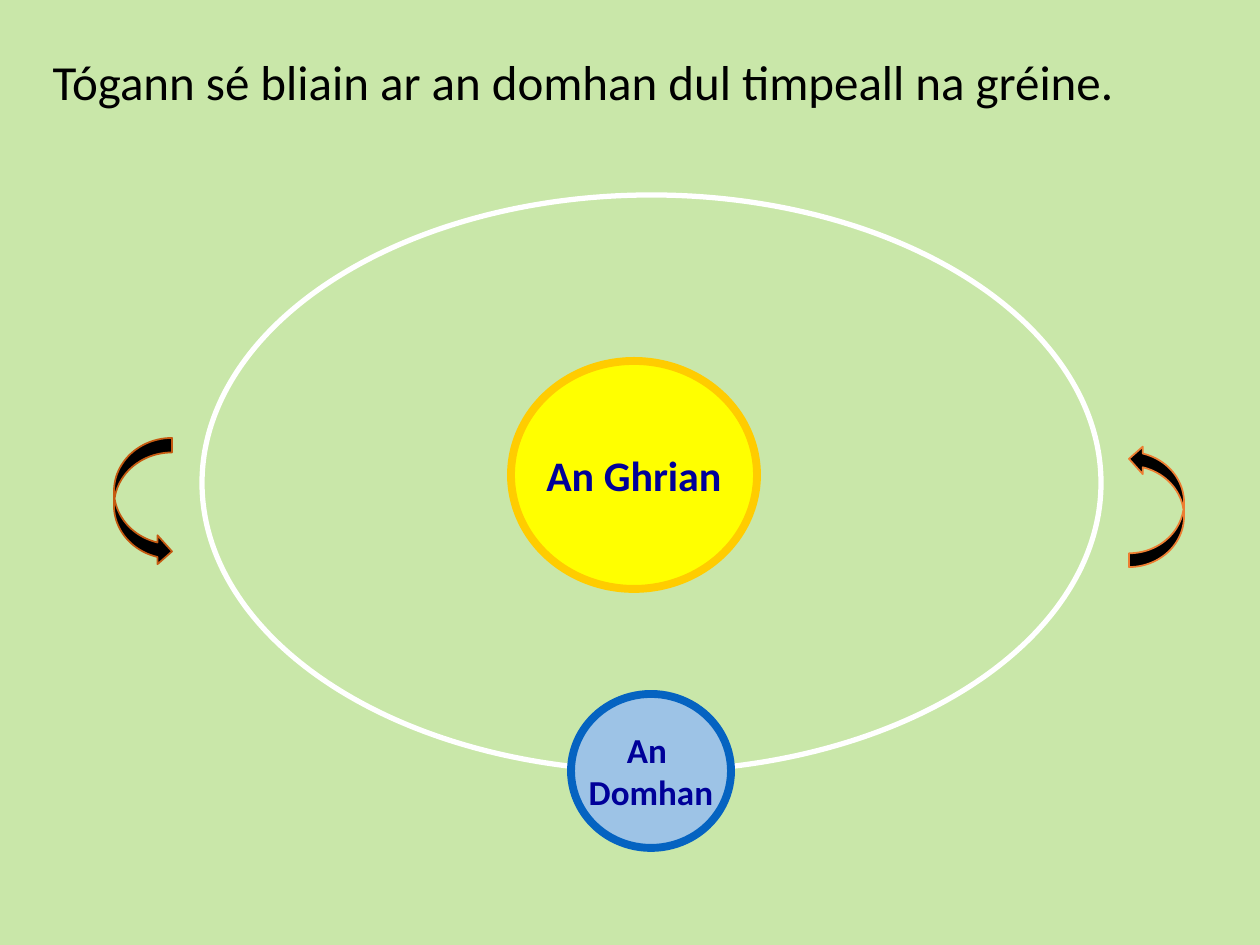
from pptx import Presentation
from pptx import util as u
from pptx.dml.color import RGBColor
from pptx.enum import shapes, text

PX = 914400 / 126  # EMU in one px
FONT = "Calibri"
BACKGROUND = "C9E7A9"
TITLE = "Tógann sé bliain ar an domhan dul timpeall na gréine."
TITLE_AREA = (40, 27, 1188, 115)

OVAL = shapes.MSO_SHAPE.OVAL
ARROW = shapes.MSO_SHAPE.CURVED_RIGHT_ARROW

# Sun, orbit, earth, left arrow, right arrow, from back to front:
# shape, area, fill, line, line width, turn, text lines, text size
PARTS = [
    (OVAL, (511, 361, 246, 228), "FFFF00", "FFCC00", 4.5, 0, ["An Ghrian"], 24),
    (OVAL, (202, 195, 899, 576), None, "FFFFFF", 3, 0, [], 0),
    (OVAL, (571, 694, 160, 154), "9DC3E6", "0563C1", 4.5, 0, ["An ", "Domhan"], 20),
    (ARROW, (114, 438, 58, 128), "000000", "C55A11", 1, 0, [], 0),
    (ARROW, (1129, 445, 55, 122), "000000", "ED7D31", 1, 180, [], 0),
]


def colour(value):
    return RGBColor.from_string(value)


def emu(area):
    return [round(length * PX) for length in area]


def write(frame, lines, align, size, ink, bold, wrap):
    settings = {"auto_size": text.MSO_AUTO_SIZE.NONE, "word_wrap": wrap,
                "vertical_anchor": text.MSO_ANCHOR.MIDDLE}
    for key, value in settings.items():
        setattr(frame, key, value)
    frame.text = "\n".join(lines)
    for para in frame.paragraphs:
        para.alignment = align
        for span in para.runs:
            for key, value in {"name": FONT, "size": u.Pt(size), "bold": bold}.items():
                setattr(span.font, key, value)
            span.font.color.rgb = colour(ink)


deck = Presentation()
deck.slide_width, deck.slide_height = u.Inches(10), u.Inches(7.5)
page = deck.slides.add_slide(deck.slide_layouts[5])
page.background.fill.solid()
page.background.fill.fore_color.rgb = colour(BACKGROUND)

# Title
title = page.shapes.title
title.left, title.top, title.width, title.height = emu(TITLE_AREA)
write(title.text_frame, [TITLE], text.PP_ALIGN.LEFT, 28, "000000", False, True)
title.text_frame.paragraphs[0].line_spacing = 0.9

# Sun, orbit, earth and direction arrows
for kind, area, fill, line, width, turn, lines, size in PARTS:
    shape = page.shapes.add_shape(kind, *emu(area))
    shape.rotation = turn
    shape.shadow.inherit = False
    if fill:
        shape.fill.solid()
        shape.fill.fore_color.rgb = colour(fill)
    else:
        shape.fill.background()
    shape.line.color.rgb = colour(line)
    shape.line.width = u.Pt(width)
    if lines:
        write(shape.text_frame, lines, text.PP_ALIGN.CENTER, size, "000099", True, False)

deck.save("out.pptx")
